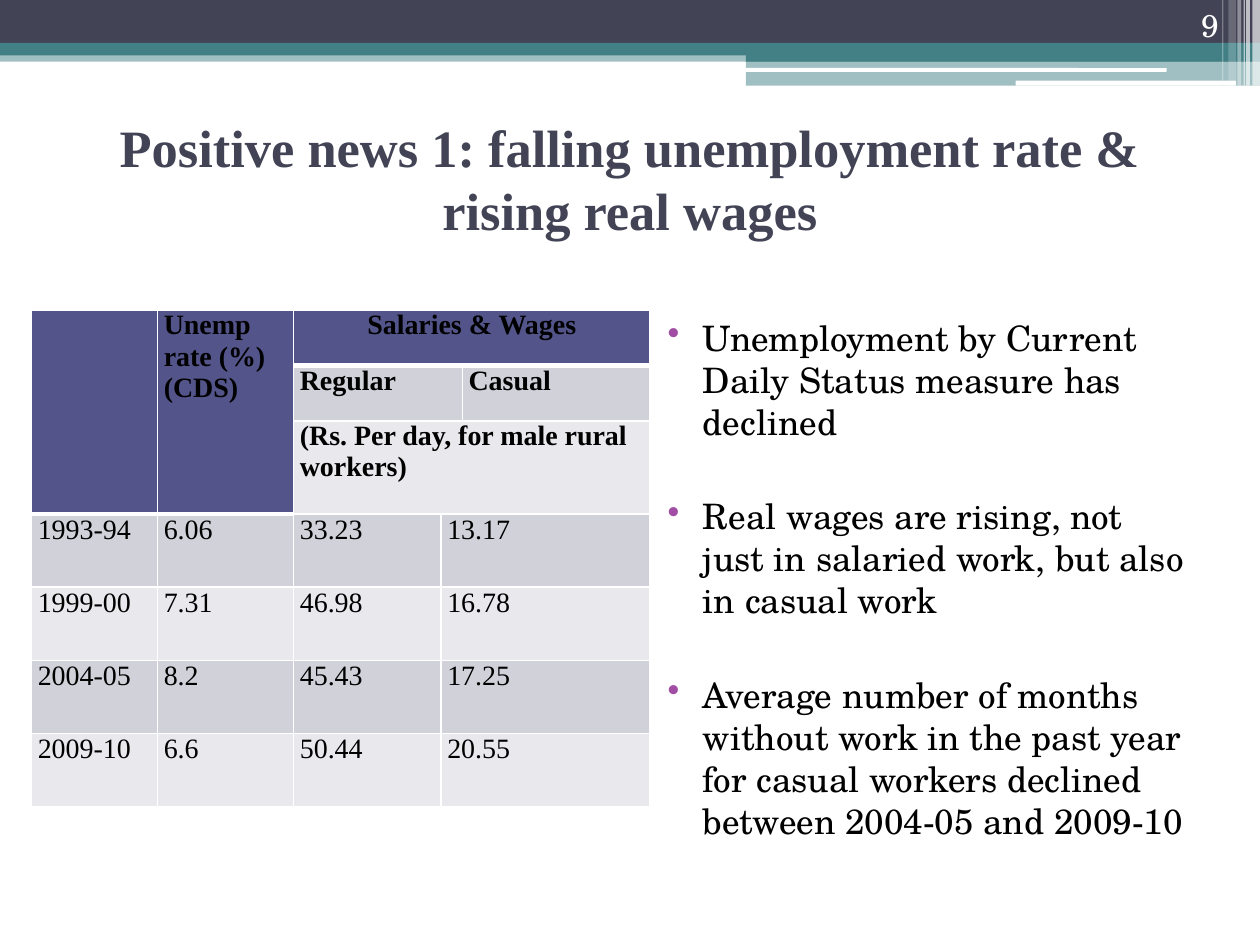
from lxml import etree
from pptx import Presentation
from pptx.dml.color import RGBColor
from pptx.enum.shapes import MSO_SHAPE
from pptx.enum.text import MSO_ANCHOR, MSO_AUTO_SIZE, PP_ALIGN
from pptx.oxml.ns import qn
from pptx.util import Inches, Pt

RECT, ROUNDED = MSO_SHAPE.RECTANGLE, MSO_SHAPE.ROUNDED_RECTANGLE
LEFT, CENTER, RIGHT = PP_ALIGN.LEFT, PP_ALIGN.CENTER, PP_ALIGN.RIGHT
TOP, MIDDLE, BOTTOM = MSO_ANCHOR.TOP, MSO_ANCHOR.MIDDLE, MSO_ANCHOR.BOTTOM
NO_AUTOFIT = MSO_AUTO_SIZE.NONE

WHITE = RGBColor(0xFF, 0xFF, 0xFF)
BLACK = RGBColor(0, 0, 0)
SLATE = RGBColor(0x42, 0x44, 0x56)
TEAL = RGBColor(0x43, 0x80, 0x86)
INDIGO = RGBColor(0x53, 0x54, 0x8A)
BAND_DARK = RGBColor(0xD1, 0xD1, 0xDA)
BAND_LIGHT = RGBColor(0xE9, 0xE9, 0xED)
PURPLE = RGBColor(0xA0, 0x4D, 0xA3)

SERIF, SCHOOLBOOK = "Times New Roman", "TeX Gyre Schola"
WIDTH, HEIGHT = Inches(10), Inches(7.5)
COLUMNS, ROWS = 100, 75

TITLE_FONT = {"name": SERIF, "size": Pt(30), "bold": True}
HEAD_FONT = {"name": SERIF, "size": Pt(16), "bold": True}
CELL_FONT = {"name": SERIF, "size": Pt(16), "bold": False}
BODY_FONT = {"name": SCHOOLBOOK, "size": Pt(20)}
NUMBER_FONT = {"name": SCHOOLBOOK, "size": Pt(18)}
CELL_FORMAT = {"margin_left": Inches(0.05), "margin_right": Inches(0.05),
               "margin_top": 0, "margin_bottom": 0, "vertical_anchor": TOP}

BANDS = [
    (RECT, (0, 4, 100, 0.9), TEAL, 50),
    (RECT, (0, 0, 100, 3.4), SLATE, 100),
    (RECT, (0, 3.4, 100, 1), TEAL, 100),
    (RECT, (59.2, 3.9, 40.8, 1), TEAL, 100),
    (RECT, (59.2, 4.8, 40.8, 2), TEAL, 50),
    (ROUNDED, (59.1, 5.4, 33.5, 0.3), WHITE, 100),
    (ROUNDED, (80.6, 6.4, 17.5, 0.4), WHITE, 100),
]
STRIPES = [(99.4, 0.6, 6.8, 65), (98.9, 0.3, 6.8, 65), (98.7, 0.1, 6.8, 60),
           (98.2, 0.3, 6.8, 40), (97.5, 0.6, 6.4, 20), (97, 0.1, 6.4, 30)]

TABLE_COLUMNS = [10, 10.8, 11.7, 1.7, 14.9]
TABLE_ROWS = [4.4, 4.4, 6] + [5.8] * 4
HEADINGS = [
    (0, 0, 3, 1, [], INDIGO, LEFT),
    (0, 1, 3, 1, ["Unemp rate (%)", "(CDS)"], INDIGO, LEFT),
    (0, 2, 1, 3, ["Salaries & Wages"], INDIGO, CENTER),
    (1, 2, 1, 2, ["Regular"], BAND_DARK, LEFT),
    (1, 4, 1, 1, ["Casual"], BAND_DARK, LEFT),
    (2, 2, 1, 3, ["(Rs. Per day, for male rural workers)"], BAND_LIGHT, LEFT),
]
WAGES = [
    ("1993-94", "6.06", "33.23", "13.17"),
    ("1999-00", "7.31", "46.98", "16.78"),
    ("2004-05", "8.2", "45.43", "17.25"),
    ("2009-10", "6.6", "50.44", "20.55"),
]
FINDINGS = [
    "Unemployment by Current Daily Status measure has declined",
    "Real wages are rising, not just in salaried work, but also in casual work",
    "Average number of months without work in the past year for casual "
    "workers declined between 2004-05 and 2009-10",
]


def apply(target, formats):
    for name, value in formats.items():
        setattr(target, name, value)


class WageSlide:
    def __init__(self, deck):
        self.slide = deck.slides.add_slide(deck.slide_layouts[5])
        self.shapes = self.slide.shapes

    def x(self, columns):
        return round(WIDTH * columns / COLUMNS)

    def y(self, rows):
        return round(HEIGHT * rows / ROWS)

    def box(self, left, top, width, height):
        return self.x(left), self.y(top), self.x(width), self.y(height)

    def fill_text(self, frame, lines, font, color, align=LEFT):
        for index, line in enumerate(lines):
            paragraph = frame.add_paragraph() if index else frame.paragraphs[0]
            paragraph.alignment = align
            run = paragraph.add_run()
            run.text = line
            apply(run.font, font)
            run.font.color.rgb = color

    def band(self, preset, place, color, opacity):
        band = self.shapes.add_shape(preset, *self.box(*place))
        band.shadow.inherit = False
        band.fill.solid()
        band.fill.fore_color.rgb = color
        band.line.fill.background()
        if opacity < 100:
            tint = band._element.spPr.find(qn("a:solidFill"))[0]
            etree.SubElement(tint, qn("a:alpha"), val=str(opacity * 1000))

    def title(self, place, text):
        title = self.shapes.title
        apply(title, dict(zip(("left", "top", "width", "height"), self.box(*place))))
        apply(title.text_frame, {"vertical_anchor": MIDDLE, "word_wrap": True,
                                 "auto_size": NO_AUTOFIT})
        self.fill_text(title.text_frame, [text], TITLE_FONT, SLATE, CENTER)
        tree = title._element.getparent()
        tree.append(title._element)

    def text(self, place, lines, font, color, align=LEFT, anchor=TOP):
        frame = self.shapes.add_textbox(*self.box(*place)).text_frame
        apply(frame, {"word_wrap": True, "vertical_anchor": anchor})
        self.fill_text(frame, lines, font, color, align)
        return frame

    def bullets(self, place, lines):
        frame = self.text(place, lines, BODY_FONT, BLACK)
        for index, paragraph in enumerate(frame.paragraphs):
            paragraph.space_before = Pt(30 if index else 3)
            properties = paragraph._p.get_or_add_pPr()
            properties.set("marL", str(Inches(0.4)))
            properties.set("indent", str(-Inches(0.28)))
            tint = etree.SubElement(properties, qn("a:buClr"))
            etree.SubElement(tint, qn("a:srgbClr"), val=str(PURPLE))
            etree.SubElement(properties, qn("a:buChar"), char="•")

    def borders(self, cell, bottom):
        properties = cell._tc.get_or_add_tcPr()
        for index, (side, points) in enumerate(
                {"lnL": 1, "lnR": 1, "lnT": 1, "lnB": bottom}.items()):
            edge = etree.Element(qn("a:" + side), w=str(Pt(points)))
            fill = etree.SubElement(edge, qn("a:solidFill"))
            etree.SubElement(fill, qn("a:srgbClr"), val=str(WHITE))
            properties.insert(index, edge)

    def cell(self, table, row, column, height, width, lines, font, fill, align=LEFT):
        for r in range(row, row + height):
            for c in range(column, column + width):
                part = table.cell(r, c)
                apply(part, CELL_FORMAT)
                part.fill.solid()
                part.fill.fore_color.rgb = fill
                self.borders(part, 3 if fill == INDIGO else 1)
        origin = table.cell(row, column)
        if height * width > 1:
            origin.merge(table.cell(row + height - 1, column + width - 1))
        self.fill_text(origin.text_frame, lines, font, BLACK, align)

    def wage_table(self, left, top):
        place = self.box(left, top, sum(TABLE_COLUMNS), sum(TABLE_ROWS))
        table = self.shapes.add_table(len(TABLE_ROWS), len(TABLE_COLUMNS), *place).table
        apply(table, {"first_row": False, "horz_banding": False})
        for column, width in zip(table.columns, TABLE_COLUMNS):
            column.width = self.x(width)
        for row, height in zip(table.rows, TABLE_ROWS):
            row.height = self.y(height)
        for row, column, height, width, lines, fill, align in HEADINGS:
            self.cell(table, row, column, height, width, lines, HEAD_FONT, fill, align)
        for row, record in enumerate(WAGES, 3):
            fill = BAND_DARK if row % 2 else BAND_LIGHT
            for column, value in enumerate(record):
                width = 2 if column == 3 else 1
                self.cell(table, row, column, 1, width, [value], CELL_FONT, fill)


def main():
    deck = Presentation()
    apply(deck, {"slide_width": WIDTH, "slide_height": HEIGHT})
    page = WageSlide(deck)
    for band in BANDS:
        page.band(*band)
    for left, width, height, opacity in STRIPES:
        page.band(RECT, (left, 0, width, height), WHITE, opacity)
    page.title((5, 8.3, 90, 11.7),
               "Positive news 1: falling unemployment rate & rising real wages")
    page.wage_table(2.5, 24.6)
    page.bullets((50.8, 24.6, 44.2, 49.5), FINDINGS)
    page.text((89.4, 0, 8.3, 4), ["9"], NUMBER_FONT, WHITE, RIGHT, BOTTOM)
    deck.save("out.pptx")


if __name__ == "__main__":
    main()
